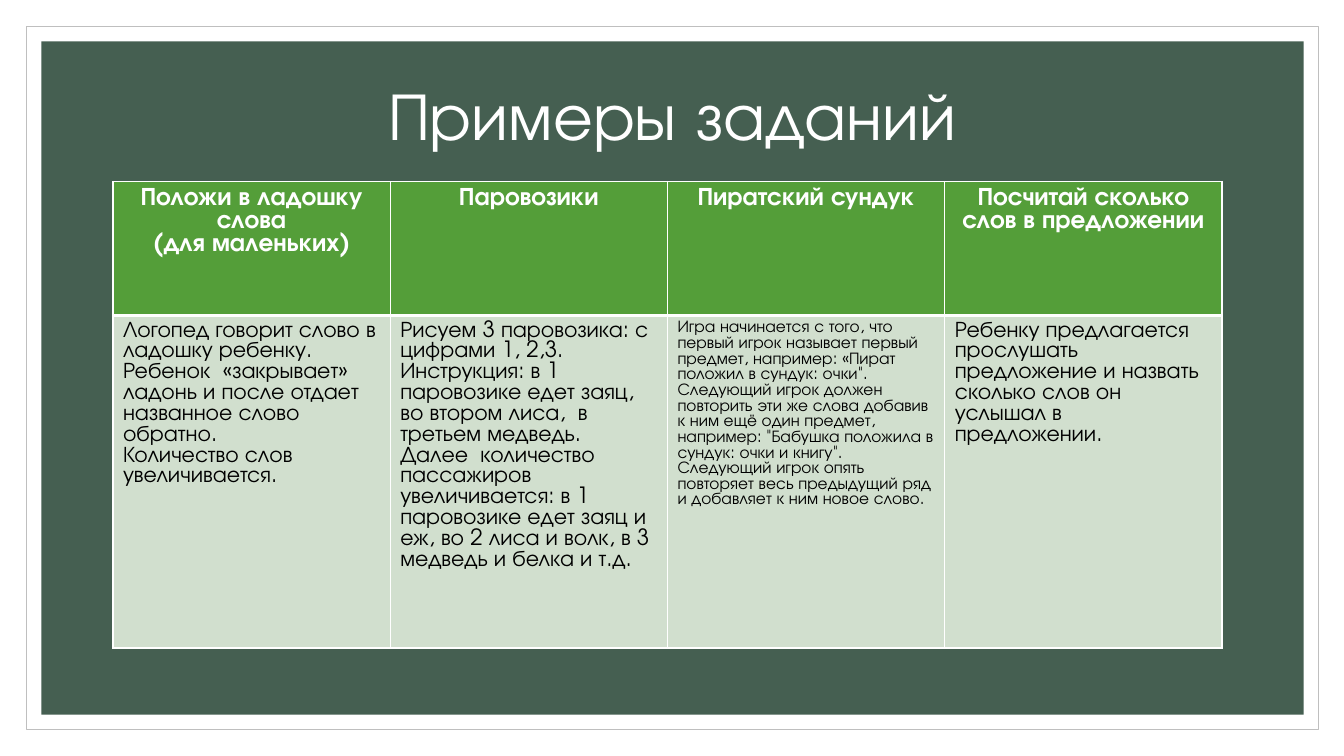
import pptx
import pptx.dml.color
import pptx.enum.shapes
import pptx.enum.text
import pptx.oxml
import pptx.oxml.ns
import pptx.util

Inches = pptx.util.Inches
Align = pptx.enum.text.PP_ALIGN

HEADERS = [
    ["Положи в ладошку слова", "(для маленьких)"],
    ["Паровозики"],
    ["Пиратский сундук"],
    ["Посчитай сколько слов в предложении"],
]
TASKS = [
    ["Логопед говорит слово в ладошку ребенку. Ребенок  «закрывает» ладонь "
     "и после отдает названное слово обратно.",
     "Количество слов увеличивается."],
    ["Рисуем 3 паровозика: с цифрами 1, 2,3.",
     "Инструкция: в 1 паровозике едет заяц, во втором лиса,  в третьем медведь.",
     "Далее  количество пассажиров увеличивается: в 1 паровозике едет заяц и еж, "
     "во 2 лиса и волк, в 3 медведь и белка и т.д."],
    ["Игра начинается с того, что первый игрок называет первый предмет, "
     "например: «Пират положил в сундук: очки\". Следующий игрок должен повторить "
     "эти же слова добавив к ним ещё один предмет, например: \"Бабушка положила "
     "в сундук: очки и книгу\". Следующий игрок опять повторяет весь предыдущий "
     "ряд и добавляет к ним новое слово."],
    ["Ребенку предлагается прослушать предложение и назвать сколько слов он "
     "услышал в предложении."],
]
TASK_SIZES = [16, 16, 12, 16]


def color(value):
    return pptx.dml.color.RGBColor.from_string(value)


class TaskSlide:
    """Draws styled elements on the current slide."""

    font_name = "TeX Gyre Adventor"
    white, gray, dark, green, pale = "FFFFFF", "BFBFBF", "455F51", "549E39", "D1DFCE"

    def __init__(self, slide):
        self.slide = slide

    def fill_text(self, text_frame, lines, size, font_color, bold=False, **formats):
        for index, line in enumerate(lines):
            paragraph = text_frame.paragraphs[0] if index == 0 else text_frame.add_paragraph()
            for name, value in formats.items():
                setattr(paragraph, name, value)
            run = paragraph.add_run()
            run.text = line
            font = {"name": self.font_name, "size": pptx.util.Pt(size), "bold": bold}
            for name, value in font.items():
                setattr(run.font, name, value)
            run.font.color.rgb = color(font_color)

    def rectangle(self, left, top, width, height, fill, line=None):
        shape = self.slide.shapes.add_shape(
            pptx.enum.shapes.MSO_SHAPE.RECTANGLE,
            Inches(left), Inches(top), Inches(width), Inches(height))
        shape.shadow.inherit = False
        shape.fill.solid()
        shape.fill.fore_color.rgb = color(fill)
        if line:
            shape.line.color.rgb = color(line)
            shape.line.width = pptx.util.Pt(0.5)
        else:
            shape.line.fill.background()

    def title(self, text, left, top, width, height):
        box = self.slide.shapes.add_textbox(
            Inches(left), Inches(top), Inches(width), Inches(height))
        box.text_frame.word_wrap = True
        box.text_frame.vertical_anchor = pptx.enum.text.MSO_ANCHOR.MIDDLE
        self.fill_text(box.text_frame, [text], 48, self.white,
                       alignment=Align.CENTER, line_spacing=0.9)

    def borders(self, cell, widths):
        properties = cell._tc.get_or_add_tcPr()
        for index, (side, width) in enumerate(widths.items()):
            properties.insert(index, pptx.oxml.parse_xml(
                f'<a:ln{side} {pptx.oxml.ns.nsdecls("a")} w="{pptx.util.Pt(width)}">'
                f'<a:solidFill><a:srgbClr val="{self.white}"/></a:solidFill></a:ln{side}>'))

    def cell(self, cell, lines, fill, widths, **text_style):
        cell.fill.solid()
        cell.fill.fore_color.rgb = color(fill)
        self.borders(cell, widths)
        self.fill_text(cell.text_frame, lines, **text_style)

    def table(self, left, top, column_width, row_heights):
        table = self.slide.shapes.add_table(
            len(row_heights), len(HEADERS), Inches(left), Inches(top),
            Inches(column_width * len(HEADERS)), Inches(sum(row_heights))).table
        for row, height in zip(table.rows, row_heights):
            row.height = Inches(height)
        for index, (header, task, size) in enumerate(zip(HEADERS, TASKS, TASK_SIZES)):
            table.columns[index].width = Inches(column_width)
            self.cell(table.cell(0, index), header, self.green,
                      {"L": 1, "R": 1, "T": 1, "B": 3},
                      size=18, font_color=self.white, bold=True, alignment=Align.CENTER)
            self.cell(table.cell(1, index), task, self.pale,
                      {"L": 1, "R": 1, "T": 3, "B": 1},
                      size=size, font_color="000000", alignment=Align.LEFT)


def main():
    presentation = pptx.Presentation()
    presentation.slide_width = Inches(13.33)
    presentation.slide_height = Inches(7.5)
    page = TaskSlide(presentation.slides.add_slide(presentation.slide_layouts[6]))
    page.rectangle(0.26, 0.26, 12.82, 6.98, page.white, page.gray)
    page.rectangle(0.41, 0.41, 12.52, 6.68, page.dark)
    page.title("Примеры заданий", 1.17, 0.7, 11, 0.95)
    page.table(1.12, 1.8, 2.75, [1.33, 2.08])
    presentation.save("out.pptx")


if __name__ == "__main__":
    main()
